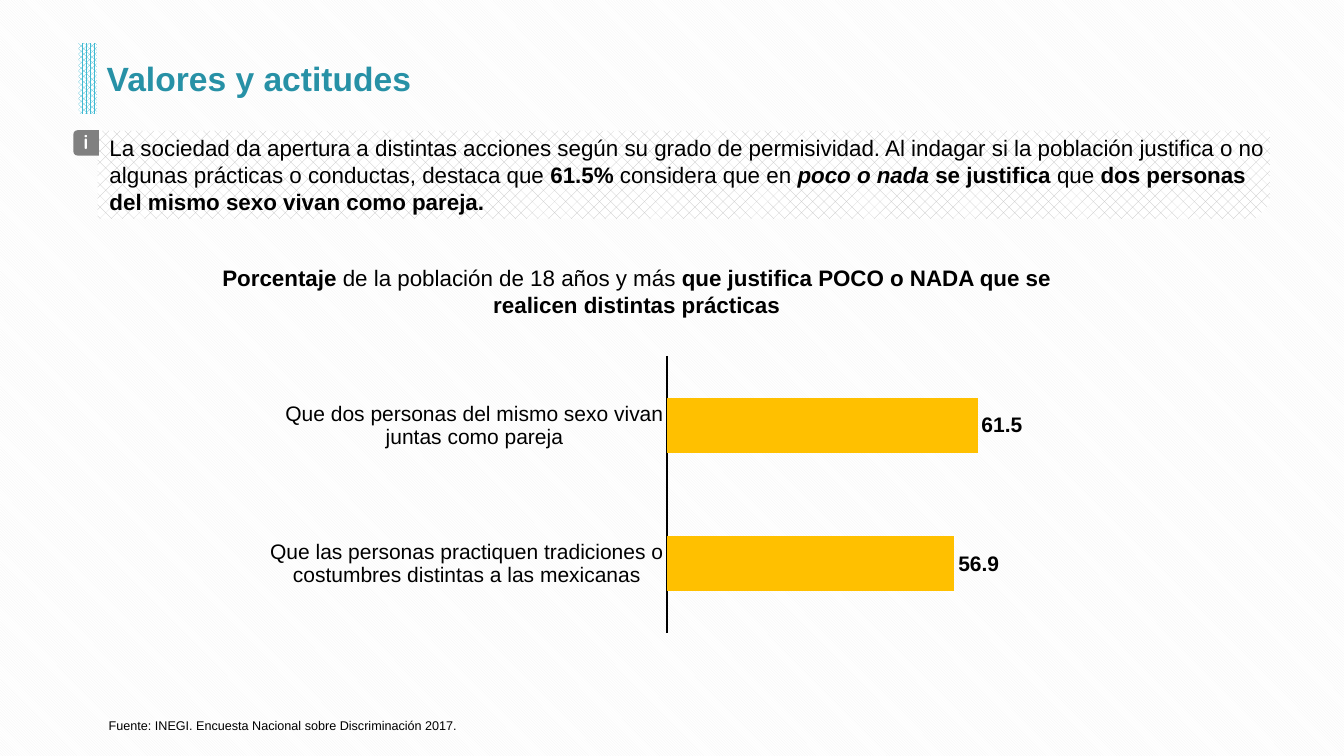
from lxml import etree
from pptx import Presentation
from pptx import util as u
from pptx.chart import data
from pptx.dml import color
from pptx.enum import chart as ch, dml, shapes, text

HUES = {"black": "000000", "white": "FFFFFF", "teal": "2791A6", "cyan": "40BAD2",
        "gold": "FFC000", "gray": "808080", "mesh": "BFBFBF", "pale": "F2F2F2"}
C_NS = "http://schemas.openxmlformats.org/drawingml/2006/chart"


def hue(name):
    return color.RGBColor.from_string(HUES[name])


def apply(target, **values):
    for key, value in values.items():
        setattr(target, key, value)


class Page:
    """Holds the style and the current slide."""

    font = "Arial"

    def __init__(self, deck):
        self.slide = deck.slides.add_slide(deck.slide_layouts[6])

    def hatch(self, fill, kind, name):
        fill.patterned()
        fill.pattern = kind
        fill.fore_color.rgb = hue(name)
        fill.back_color.rgb = hue("white")

    def shape(self, kind, box, name, pattern=None, turn=0):
        item = self.slide.shapes.add_shape(kind, *map(u.Cm, box))
        item.shadow.inherit = False
        item.line.fill.background()
        item.rotation = turn
        if pattern:
            self.hatch(item.fill, pattern, name)
        else:
            item.fill.solid()
            item.fill.fore_color.rgb = hue(name)
        return item

    def label(self, box, runs, size, name="black", font=None, anchor="TOP",
              align="LEFT", **frame):
        """Each run is its words and a style: b for bold, i for italic."""
        item = self.slide.shapes.add_textbox(*map(u.Cm, box))
        apply(item.text_frame, **{"word_wrap": True, **frame},
              vertical_anchor=text.MSO_ANCHOR[anchor])
        para = item.text_frame.paragraphs[0]
        para.alignment = text.PP_ALIGN[align]
        for words, style in runs:
            run = para.add_run()
            run.text = words
            apply(run.font, name=font or self.font, size=u.Pt(size),
                  bold="b" in style, italic="i" in style)
            run.font.color.rgb = hue(name)

    def bars(self, box, rows, plot, top):
        info = data.CategoryChartData(number_format="0.0")
        info.categories = list(rows)
        info.add_series("Porcentaje", rows.values())
        chart = self.slide.shapes.add_chart(
            ch.XL_CHART_TYPE.BAR_CLUSTERED, *map(u.Cm, box), info).chart
        apply(chart, has_legend=False, has_title=False)
        apply(chart.font, name=self.font, size=u.Pt(15))
        chart.font.color.rgb = hue("black")

        # Axes
        axis = chart.category_axis
        apply(axis, reverse_order=True, major_tick_mark=ch.XL_TICK_MARK.NONE)
        axis.format.line.width = u.Pt(1.5)
        axis.format.line.color.rgb = hue("black")
        apply(chart.value_axis, visible=False, has_major_gridlines=False,
              minimum_scale=0, maximum_scale=top)

        # Bars and labels
        group = chart.plots[0]
        apply(group, gap_width=150, vary_by_categories=False, has_data_labels=True)
        labels = group.data_labels
        apply(labels, show_value=True, number_format="0.0",
              number_format_is_linked=False,
              position=ch.XL_LABEL_POSITION.OUTSIDE_END)
        apply(labels.font, name=self.font, size=u.Pt(15), bold=True)
        labels.font.color.rgb = hue("black")
        fill = group.series[0].format.fill
        fill.solid()
        fill.fore_color.rgb = hue("gold")

        # Inner plot area
        area = chart.element.find(f".//{{{C_NS}}}plotArea")
        for old in area.findall(f"{{{C_NS}}}layout"):
            area.remove(old)
        parts = [("layoutTarget", "inner"), ("xMode", "edge"), ("yMode", "edge")]
        parts += zip("xywh", map(str, plot))
        body = "".join(f'<c:{tag} val="{val}"/>' for tag, val in parts)
        area.insert(0, etree.fromstring(
            f'<c:layout xmlns:c="{C_NS}"><c:manualLayout>{body}'
            '</c:manualLayout></c:layout>'))


def main():
    deck = Presentation()
    apply(deck, slide_width=u.Cm(33.87), slide_height=u.Cm(19.05))
    page = Page(deck)
    kinds, weaves = shapes.MSO_SHAPE, dml.MSO_PATTERN

    # Background and title marker
    page.hatch(page.slide.background.fill, weaves.LIGHT_DOWNWARD_DIAGONAL, "pale")
    page.shape(kinds.RECTANGLE, (1.98, 1.09, 0.46, 1.78), "cyan",
               weaves.PERCENT_75)

    # Chart
    page.bars((6.02, 8.59, 21.18, 7.75), {
        "Que dos personas del mismo sexo vivan juntas como pareja": 61.5,
        "Que las personas practiquen tradiciones o costumbres distintas "
        "a las mexicanas": 56.9,
    }, plot=(0.51, 0.05, 0.42, 0.9), top=70)

    # Message panel with its icon
    panel = page.shape(kinds.SNIP_1_RECTANGLE, (2.46, 3.3, 29.54, 2.21), "mesh",
                       weaves.PERCENT_25, turn=180)
    panel.element.spPr.xfrm.set("flipH", "1")
    page.shape(kinds.ROUND_2_SAME_RECTANGLE, (1.85, 3.28, 0.64, 0.64), "gray",
               turn=270)
    page.label((1.9, 3.25, 0.53, 0.66), [("i", "b")], 14, "white", "Quicksand",
               "MIDDLE", "CENTER", word_wrap=False, margin_left=0, margin_right=0)

    # Texts
    page.label((2.44, 0.91, 29.49, 2.11), [("Valores y actitudes", "b")], 24,
               "teal", anchor="MIDDLE")
    page.label((2.49, 16.64, 19.94, 1.96),
               [("Fuente: INEGI. Encuesta Nacional sobre Discriminación 2017.", "")],
               9, anchor="BOTTOM")
    page.label((2.51, 3.25, 29.79, 2.24), [
        ("La sociedad da apertura a distintas acciones según su grado de "
         "permisividad. Al indagar si la población justifica o no algunas "
         "prácticas o conductas, destaca que ", ""),
        ("61.5%", "b"), (" considera que en ", ""), ("poco o nada ", "bi"),
        ("se justifica ", "b"), ("que ", ""),
        ("dos personas del mismo sexo vivan como pareja.", "b")], 16)
    page.label((4.45, 6.17, 23.24, 2.34), [
        ("Porcentaje ", "b"), ("de la población de 18 años y más ", ""),
        ("que justifica POCO o NADA que se realicen distintas prácticas", "b")],
        16, anchor="MIDDLE", align="CENTER", margin_right=u.Cm(0.3))

    deck.save("out.pptx")


if __name__ == "__main__":
    main()
